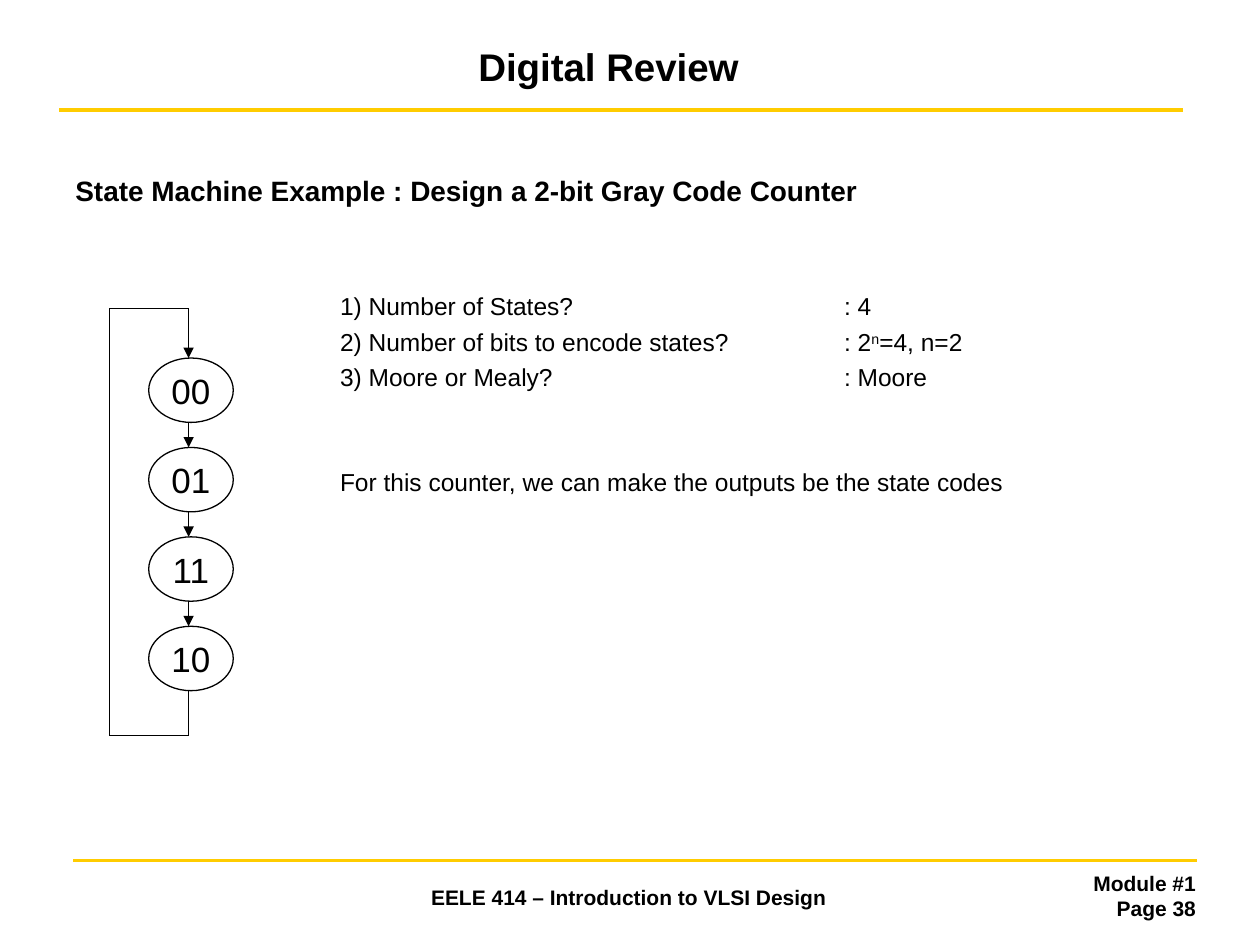
from dataclasses import dataclass

from lxml import etree
from pptx import Presentation
from pptx.dml.color import RGBColor
from pptx.enum.shapes import MSO_CONNECTOR, MSO_SHAPE
from pptx.enum.text import MSO_ANCHOR, PP_ALIGN
from pptx.oxml.ns import qn
from pptx.util import Pt

LEFT, CENTER, RIGHT = PP_ALIGN.LEFT, PP_ALIGN.CENTER, PP_ALIGN.RIGHT
TOP, MIDDLE = MSO_ANCHOR.TOP, MSO_ANCHOR.MIDDLE
STRAIGHT, OVAL = MSO_CONNECTOR.STRAIGHT, MSO_SHAPE.OVAL

FONT = "Arial"
BLACK, GOLD = "000000", "FFCC00"
ANSWER_TAB = 288
SUPERSCRIPT = "30000"


@dataclass
class Box:
    left: float
    top: float
    width: float
    height: float


@dataclass
class Label:
    lines: list[str]
    box: Box
    size: float
    align: PP_ALIGN = LEFT
    anchor: MSO_ANCHOR = TOP


@dataclass
class Note:
    """Text pieces, of which every second one is superscript."""
    pieces: list[str]
    space_before: float = 0


@dataclass
class Link:
    x1: float
    y1: float
    x2: float
    y2: float
    arrow: bool = False


LABELS = [
    Label(["Module #1", "Page 38"], Box(578.2, 493.9, 112.3, 36), 12, RIGHT),
    Label(["EELE 414 – Introduction to VLSI Design"],
          Box(193, 501.8, 332.6, 23), 12, CENTER),
    Label(["Digital Review"], Box(41.8, 18, 612, 39.6), 22, CENTER, MIDDLE),
    Label(["State Machine Example : Design a 2-bit Gray Code Counter"],
          Box(36, 95.8, 653.8, 253.4), 16),
]
RULES = [Link(33.8, 63, 676, 63), Link(41.8, 491.8, 684, 491.8)]
NOTES = [
    Note(["1) Number of States?\t: 4"]),
    Note(["2) Number of bits to encode states?\t: 2", "n", "=4, n=2"], 3.5),
    Note(["3) Moore or Mealy?\t: Moore"], 3.5),
    Note(["For this counter, we can make the outputs be the state codes"], 43),
]
NOTES_BOX = Box(187.2, 163, 504.7, 124.6)

STATES = ["00", "01", "11", "10"]
FIRST_STATE = Box(85, 204.6, 48.3, 36.8)
STATE_PITCH = 51.1
FLOW_X, RETURN_X = 107.8, 62.5
LOOP_TOP, LOOP_BOTTOM = 176.4, 420.3


def color(value: str) -> RGBColor:
    return RGBColor.from_string(value)


def add_run(paragraph, text: str, size: float, bold: bool = False):
    run = paragraph.add_run()
    run.text = text
    run.font.name = FONT
    run.font.size = Pt(size)
    run.font.bold = bold
    run.font.color.rgb = color(BLACK)
    return run


def add_text_frame(slide, box: Box, anchor: MSO_ANCHOR = TOP):
    frame = slide.shapes.add_textbox(
        Pt(box.left), Pt(box.top), Pt(box.width), Pt(box.height)).text_frame
    frame.word_wrap = True
    frame.vertical_anchor = anchor
    return frame


def draw_label(slide, label: Label) -> None:
    paragraph = add_text_frame(slide, label.box, label.anchor).paragraphs[0]
    paragraph.alignment = label.align
    for index, line in enumerate(label.lines):
        if index:
            paragraph.add_line_break()
        add_run(paragraph, line, label.size, bold=True)


def draw_link(slide, link: Link, line_color: str, width: float) -> None:
    connector = slide.shapes.add_connector(
        STRAIGHT, Pt(link.x1), Pt(link.y1), Pt(link.x2), Pt(link.y2))
    connector.line.color.rgb = color(line_color)
    connector.line.width = Pt(width)
    if link.arrow:
        etree.SubElement(connector.line._get_or_add_ln(), qn("a:tailEnd"),
                         type="triangle")
    etree.SubElement(connector._element.spPr, qn("a:effectLst"))


def draw_state(slide, code: str, box: Box) -> None:
    state = slide.shapes.add_shape(
        OVAL, Pt(box.left), Pt(box.top), Pt(box.width), Pt(box.height))
    state.shadow.inherit = False
    state.fill.background()
    state.line.color.rgb = color(BLACK)
    state.line.width = Pt(0.75)
    frame = state.text_frame
    frame.word_wrap = False
    frame.vertical_anchor = MIDDLE
    frame.paragraphs[0].alignment = CENTER
    add_run(frame.paragraphs[0], code, 20)


def draw_state_machine(slide) -> None:
    tops = [FIRST_STATE.top + i * STATE_PITCH for i in range(len(STATES))]
    bottoms = [top + FIRST_STATE.height for top in tops]
    for code, top in zip(STATES, tops):
        draw_state(slide, code, Box(FIRST_STATE.left, top, FIRST_STATE.width,
                                    FIRST_STATE.height))
    links = [Link(FLOW_X, start, FLOW_X, end, arrow=True)
             for start, end in zip([LOOP_TOP] + bottoms, tops)]
    links += [
        Link(FLOW_X, bottoms[-1], FLOW_X, LOOP_BOTTOM),
        Link(FLOW_X, LOOP_BOTTOM, RETURN_X, LOOP_BOTTOM),
        Link(RETURN_X, LOOP_BOTTOM, RETURN_X, LOOP_TOP),
        Link(FLOW_X, LOOP_TOP, RETURN_X, LOOP_TOP),
    ]
    for link in links:
        draw_link(slide, link, BLACK, 0.75)


def draw_notes(slide) -> None:
    frame = add_text_frame(slide, NOTES_BOX)
    for index, note in enumerate(NOTES):
        paragraph = frame.add_paragraph() if index else frame.paragraphs[0]
        tabs = etree.SubElement(paragraph._p.get_or_add_pPr(), qn("a:tabLst"))
        etree.SubElement(tabs, qn("a:tab"), pos=str(Pt(ANSWER_TAB)), algn="l")
        paragraph.space_before = Pt(note.space_before)
        for position, piece in enumerate(note.pieces):
            run = add_run(paragraph, piece, 14)
            if position % 2:
                run._r.get_or_add_rPr().set("baseline", SUPERSCRIPT)


def main() -> None:
    deck = Presentation()
    deck.slide_width, deck.slide_height = Pt(720), Pt(540)
    slide = deck.slides.add_slide(deck.slide_layouts[6])
    for rule in RULES:
        draw_link(slide, rule, GOLD, 2)
    for label in LABELS:
        draw_label(slide, label)
    draw_state_machine(slide)
    draw_notes(slide)
    deck.save("out.pptx")


if __name__ == "__main__":
    main()
